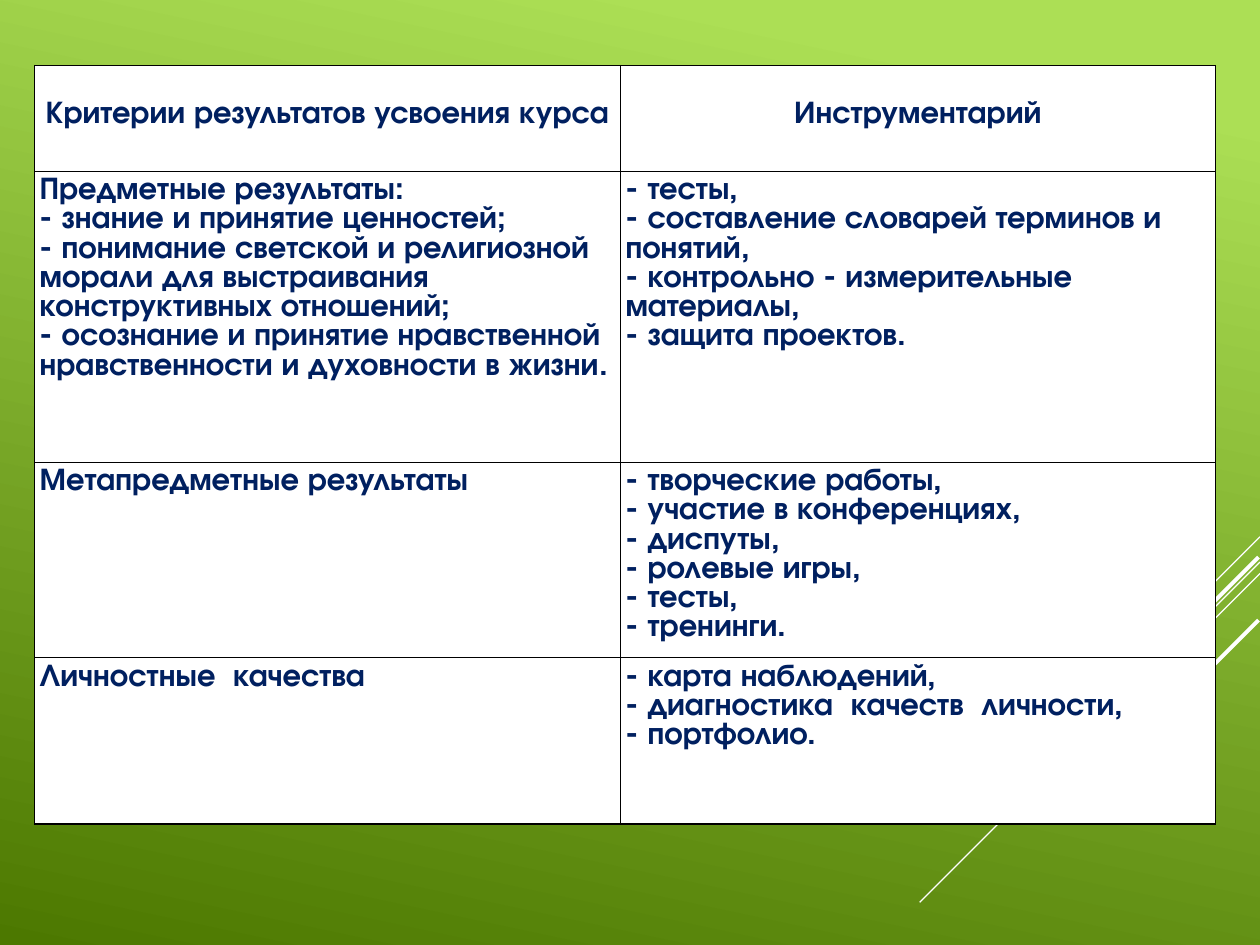
from dataclasses import dataclass

import lxml.etree
import pptx
import pptx.dml.color
import pptx.enum.shapes
import pptx.enum.text
import pptx.oxml.ns
import pptx.util

Cm = pptx.util.Cm
Pt = pptx.util.Pt
RGBColor = pptx.dml.color.RGBColor
Align = pptx.enum.text.PP_ALIGN
qn = pptx.oxml.ns.qn

LIME = RGBColor(0xAC, 0xDF, 0x55)
MOSS = RGBColor(0x4C, 0x78, 0x00)
NAVY = RGBColor(0x00, 0x20, 0x60)
WHITE = RGBColor(0xFF, 0xFF, 0xFF)
BLACK = RGBColor(0x00, 0x00, 0x00)

FONT = "TeX Gyre Adventor"
PITCH = Pt(16.74)
PAD = Cm(0.1)


@dataclass
class Ray:
    """A line falling to the left at 45 degrees, in cm."""
    x: float
    y: float
    run: float
    width: float = 0.75


@dataclass
class Row:
    height: float
    left: list[str]
    right: list[str]


RAYS = [
    Ray(25.4, 10.82, 2.11),
    Ray(25.4, 11.33, 6.86),
    Ray(25.4, 11.56, 4.37),
    Ray(25.37, 11.23, 3.99, 2.25),
    Ray(25.37, 12.5, 2.9, 2.25),
]

COLS = [11.81, 11.99]
ROWS = [
    Row(2.13, ["Критерии результатов усвоения курса"], ["Инструментарий"]),
    Row(5.87, [
        "Предметные результаты:",
        "- знание и принятие ценностей;",
        "- понимание светской и религиозной морали для выстраивания "
        "конструктивных отношений;",
        "- осознание и принятие нравственной нравственности и духовности "
        "в жизни.",
    ], [
        "- тесты,",
        "- составление словарей терминов и понятий,",
        "- контрольно - измерительные материалы,",
        "- защита проектов.",
    ]),
    Row(3.94, ["Метапредметные результаты"], [
        "- творческие работы,",
        "- участие в конференциях,",
        "- диспуты,",
        "- ролевые игры,",
        "- тесты,",
        "- тренинги.",
    ]),
    Row(3.35, ["Личностные  качества"], [
        "- карта наблюдений,",
        "- диагностика  качеств  личности,",
        "- портфолио.",
    ]),
]


def paint(slide) -> None:
    fill = slide.background.fill
    fill.gradient()
    fill.gradient_angle = 258
    for stop, color, place in zip(fill.gradient_stops, (LIME, MOSS), (0.1, 1)):
        stop.color.rgb = color
        stop.position = place


def draw_ray(slide, ray: Ray) -> None:
    line = slide.shapes.add_connector(
        pptx.enum.shapes.MSO_CONNECTOR.STRAIGHT,
        Cm(ray.x), Cm(ray.y), Cm(ray.x - ray.run), Cm(ray.y + ray.run))
    line.line.color.rgb = WHITE
    line.line.width = Pt(ray.width)
    lxml.etree.SubElement(line._element.spPr, qn("a:effectLst"))


def frame(cell) -> None:
    """Give the cell a thin border on all four sides."""
    props = cell._tc.get_or_add_tcPr()
    for side in ("lnL", "lnR", "lnT", "lnB"):
        edge = lxml.etree.SubElement(props, qn(f"a:{side}"), w=str(Pt(0.75)))
        solid = lxml.etree.SubElement(edge, qn("a:solidFill"))
        lxml.etree.SubElement(solid, qn("a:srgbClr"), val=str(BLACK))


def fill_cell(cell, lines: list[str], head: bool) -> None:
    frame(cell)
    cell.fill.solid()
    cell.fill.fore_color.rgb = WHITE
    cell.margin_left = cell.margin_right = cell.margin_bottom = PAD
    cell.margin_top = PAD + PITCH if head else PAD
    for i, text in enumerate(lines):
        body = cell.text_frame
        para = body.add_paragraph() if i else body.paragraphs[0]
        para.alignment = Align.CENTER if head else Align.LEFT
        para.line_spacing = PITCH
        run = para.add_run()
        run.text = text
        run.font.name = FONT
        run.font.size = Pt(18)
        run.font.bold = True
        run.font.color.rgb = NAVY


def draw_table(slide, rows: list[Row]) -> None:
    high = sum(row.height for row in rows)
    table = slide.shapes.add_table(
        len(rows), len(COLS), Cm(0.7), Cm(1.32), Cm(sum(COLS)), Cm(high)).table
    table.horz_banding = False
    for col, width in zip(table.columns, COLS):
        col.width = Cm(width)
    for i, row in enumerate(rows):
        table.rows[i].height = Cm(row.height)
        for j, lines in enumerate((row.left, row.right)):
            fill_cell(table.cell(i, j), lines, head=i == 0)


def main() -> None:
    deck = pptx.Presentation()
    deck.slide_width, deck.slide_height = Cm(25.4), Cm(19.05)
    slide = deck.slides.add_slide(deck.slide_layouts[6])
    paint(slide)
    for ray in RAYS:
        draw_ray(slide, ray)
    draw_table(slide, ROWS)
    deck.save("out.pptx")


if __name__ == "__main__":
    main()
